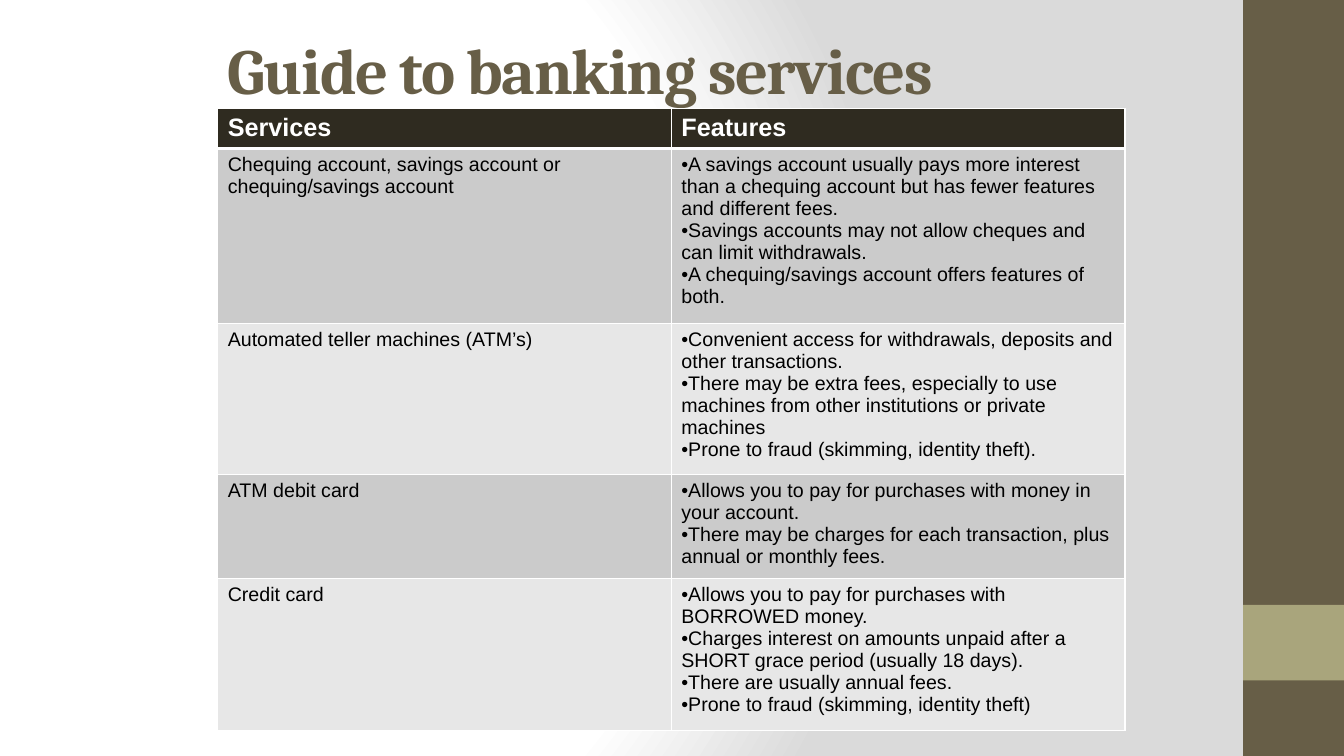
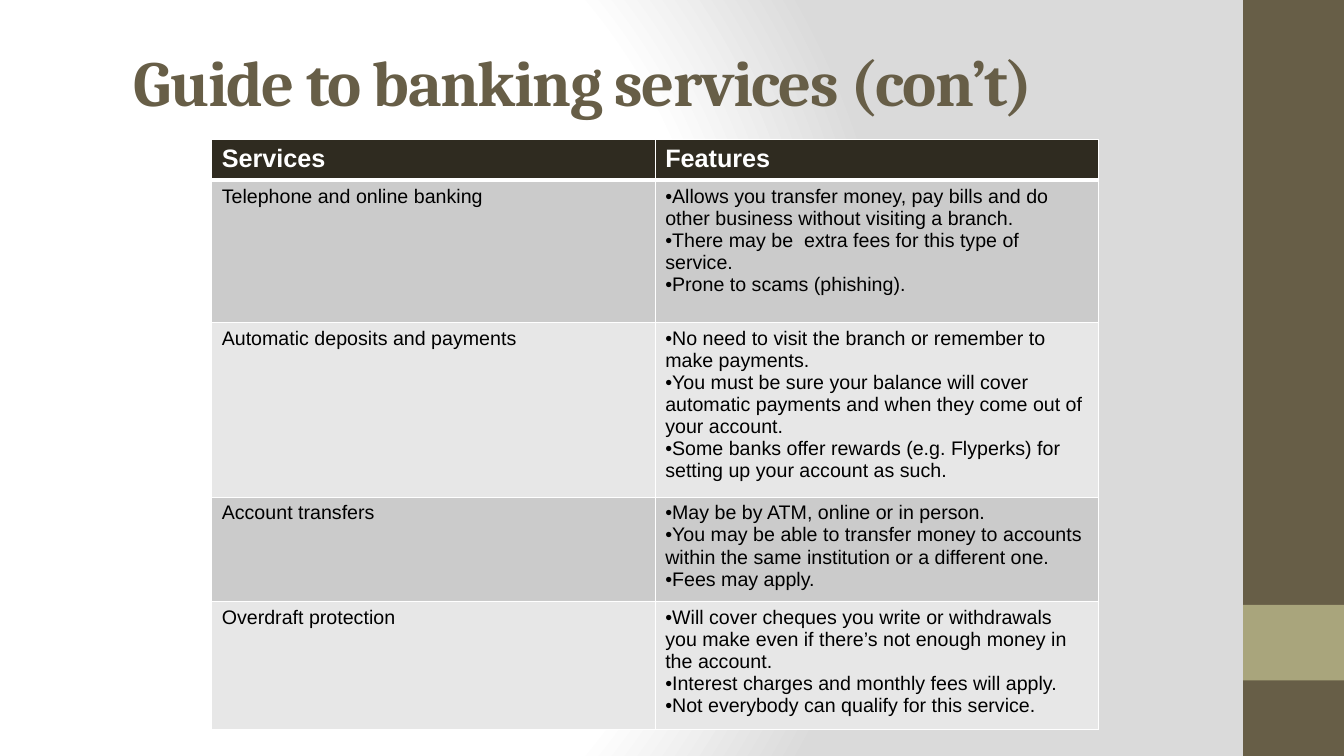
from dataclasses import dataclass

from lxml import etree
from pptx import Presentation
from pptx.dml.color import RGBColor
from pptx.enum.shapes import MSO_SHAPE
from pptx.enum.text import MSO_ANCHOR
from pptx.oxml.ns import qn
from pptx.util import Emu, Inches, Pt

RECT = MSO_SHAPE.RECTANGLE
MIDDLE = MSO_ANCHOR.MIDDLE
WIDTH, HEIGHT = Inches(13.33), Inches(7.5)

OLIVE, SAGE, DARK = "675E47", "A9A57C", "2F2B20"
WHITE, BLACK, MIST = "FFFFFF", "000000", "DADADA"
STRIPES = ("CBCBCB", "E7E7E7")

TITLE = {"name": "Cambria", "size": Pt(46), "bold": True}
HEAD = {"name": "Arial", "size": Pt(18), "bold": True}
BODY = {"name": "Arial", "size": Pt(14), "bold": False}

# Row heights in percent of the slide height
HEAD_ROW, TEXT_LINE, ROW_PAD = 5.1, 2.91, 1.33


@dataclass(frozen=True)
class Box:
    """Place and size in percent of the slide."""
    left: float
    top: float
    width: float
    height: float

    def emu(self) -> tuple[Emu, Emu, Emu, Emu]:
        return (across(self.left), down(self.top),
                across(self.width), down(self.height))


@dataclass(frozen=True)
class Band:
    box: Box
    fill: str


@dataclass(frozen=True)
class Service:
    name: str
    lines: int
    features: tuple[str, ...]


@dataclass(frozen=True)
class Guide:
    title: str
    title_box: Box
    left: float
    top: float
    width: float
    services: tuple[Service, ...]


BANDS = (Band(Box(92.5, 0, 7.5, 100), OLIVE), Band(Box(92.5, 80, 7.5, 10), SAGE))

GUIDES = (
    Guide("Guide to banking services", Box(16.2, 4, 67.5, 10.27), 16.2, 14.3, 67.5, (
        Service("Chequing account, savings account or chequing/savings account", 7, (
            "A savings account usually pays more interest than a chequing account "
            "but has fewer features and different fees.",
            "Savings accounts may not allow cheques and can limit withdrawals.",
            "A chequing/savings account offers features of both.")),
        Service("Automated teller machines (ATM’s)", 6, (
            "Convenient access for withdrawals, deposits and other transactions.",
            "There may be extra fees, especially to use machines from other "
            "institutions or private machines",
            "Prone to fraud (skimming, identity theft).")),
        Service("ATM debit card", 4, (
            "Allows you to pay for purchases with money in your account.",
            "There may be charges for each transaction, plus annual or monthly fees.")),
        Service("Credit card", 6, (
            "Allows you to pay for purchases with BORROWED money.",
            "Charges interest on amounts unpaid after a SHORT grace period "
            "(usually 18 days).",
            "There are usually annual fees.",
            "Prone to fraud (skimming, identity theft)")),
    )),
    Guide("Guide to banking services (con’t)", Box(9.23, 4, 74.5, 13.47), 15.75, 18.5, 66, (
        Service("Telephone and online banking", 6, (
            "Allows you transfer money, pay bills and do other business without "
            "visiting a branch.",
            "There may be  extra fees for this type of service.",
            "Prone to scams (phishing).")),
        Service("Automatic deposits and payments", 7, (
            "No need to visit the branch or remember to make payments.",
            "You must be sure your balance will cover automatic payments and when "
            "they come out of your account.",
            "Some banks offer rewards (e.g. Flyperks) for setting up your account "
            "as such.")),
        Service("Account transfers", 4, (
            "May be by ATM, online or in person.",
            "You may be able to transfer money to accounts within the same "
            "institution or a different one.",
            "Fees may apply.")),
        Service("Overdraft protection", 5, (
            "Will cover cheques you write or withdrawals you make even if there’s "
            "not enough money in the account.",
            "Interest charges and monthly fees will apply.",
            "Not everybody can qualify for this service.")),
    )),
)


def across(share: float) -> Emu:
    return Emu(round(WIDTH * share / 100))


def down(share: float) -> Emu:
    return Emu(round(HEIGHT * share / 100))


def color(code: str) -> RGBColor:
    return RGBColor.from_string(code)


def node(parent, tag: str, **attrs):
    return etree.SubElement(parent, qn(tag), {k: str(v) for k, v in attrs.items()})


def backdrop(master) -> None:
    """Give every slide the round white to grey gradient."""
    master.background.fill.gradient()
    grad = master.element.find(".//" + qn("a:gradFill"))
    for child in list(grad):
        grad.remove(child)
    stops = node(grad, "a:gsLst")
    for share, code in ((0, WHITE), (75, WHITE), (100, MIST)):
        node(node(stops, "a:gs", pos=share * 1000), "a:srgbClr", val=code)
    way = node(grad, "a:path", path="circle")
    node(way, "a:fillToRect", l=20000, t=50000, r=100000, b=50000)


def write(para, text: str, style: dict, code: str):
    run = para.add_run()
    run.text = text
    for key, value in style.items():
        setattr(run.font, key, value)
    run.font.color.rgb = color(code)
    return run


def draw_band(slide, band: Band) -> None:
    shape = slide.shapes.add_shape(RECT, *band.box.emu())
    shape.shadow.inherit = False
    shape.fill.solid()
    shape.fill.fore_color.rgb = color(band.fill)
    shape.line.fill.background()


def draw_title(slide, guide: Guide) -> None:
    frame = slide.shapes.add_textbox(*guide.title_box.emu()).text_frame
    frame.word_wrap = True
    frame.vertical_anchor = MIDDLE
    run = write(frame.paragraphs[0], guide.title, TITLE, OLIVE)
    run.font._element.set("spc", "-100")


def paint(cell, code: str, top: int, base: int) -> None:
    """Fill a cell and rule its sides in white; top and base are points."""
    cell.fill.solid()
    cell.fill.fore_color.rgb = color(code)
    props = cell._tc.get_or_add_tcPr()
    sides = {"a:lnL": 1, "a:lnR": 1, "a:lnT": top, "a:lnB": base}
    for spot, (tag, width) in enumerate(sides.items()):
        line = node(props, tag, w=Pt(width))
        node(node(line, "a:solidFill"), "a:srgbClr", val=WHITE)
        props.insert(spot, line)


def fill_list(cell, items: tuple[str, ...]) -> None:
    frame = cell.text_frame
    for spot, item in enumerate(items):
        para = frame.add_paragraph() if spot else frame.paragraphs[0]
        props = para._p.get_or_add_pPr()
        props.set("marL", "0")
        props.set("indent", "0")
        node(props, "a:buFont", typeface="Arial")
        node(props, "a:buChar", char="•")
        write(para, item, BODY, BLACK)


def draw_table(slide, guide: Guide) -> None:
    rows = [HEAD_ROW] + [s.lines * TEXT_LINE + ROW_PAD for s in guide.services]
    box = Box(guide.left, guide.top, guide.width, sum(rows))
    table = slide.shapes.add_table(len(rows), 2, *box.emu()).table
    table.horz_banding = False
    for row, share in zip(table.rows, rows):
        row.height = down(share)
    for col, label in enumerate(("Services", "Features")):
        cell = table.cell(0, col)
        write(cell.text_frame.paragraphs[0], label, HEAD, WHITE)
        paint(cell, DARK, 1, 3)
    for row, service in enumerate(guide.services, 1):
        name, list_cell = table.cell(row, 0), table.cell(row, 1)
        write(name.text_frame.paragraphs[0], service.name, BODY, BLACK)
        fill_list(list_cell, service.features)
        for cell in (name, list_cell):
            paint(cell, STRIPES[(row - 1) % 2], 3 if row == 1 else 1, 1)


def main() -> None:
    deck = Presentation()
    deck.slide_width, deck.slide_height = WIDTH, HEIGHT
    backdrop(deck.slide_master)
    blank = deck.slide_layouts[6]
    for guide in GUIDES:
        slide = deck.slides.add_slide(blank)
        for band in BANDS:
            draw_band(slide, band)
        draw_title(slide, guide)
        draw_table(slide, guide)
    deck.save("out.pptx")


if __name__ == "__main__":
    main()
